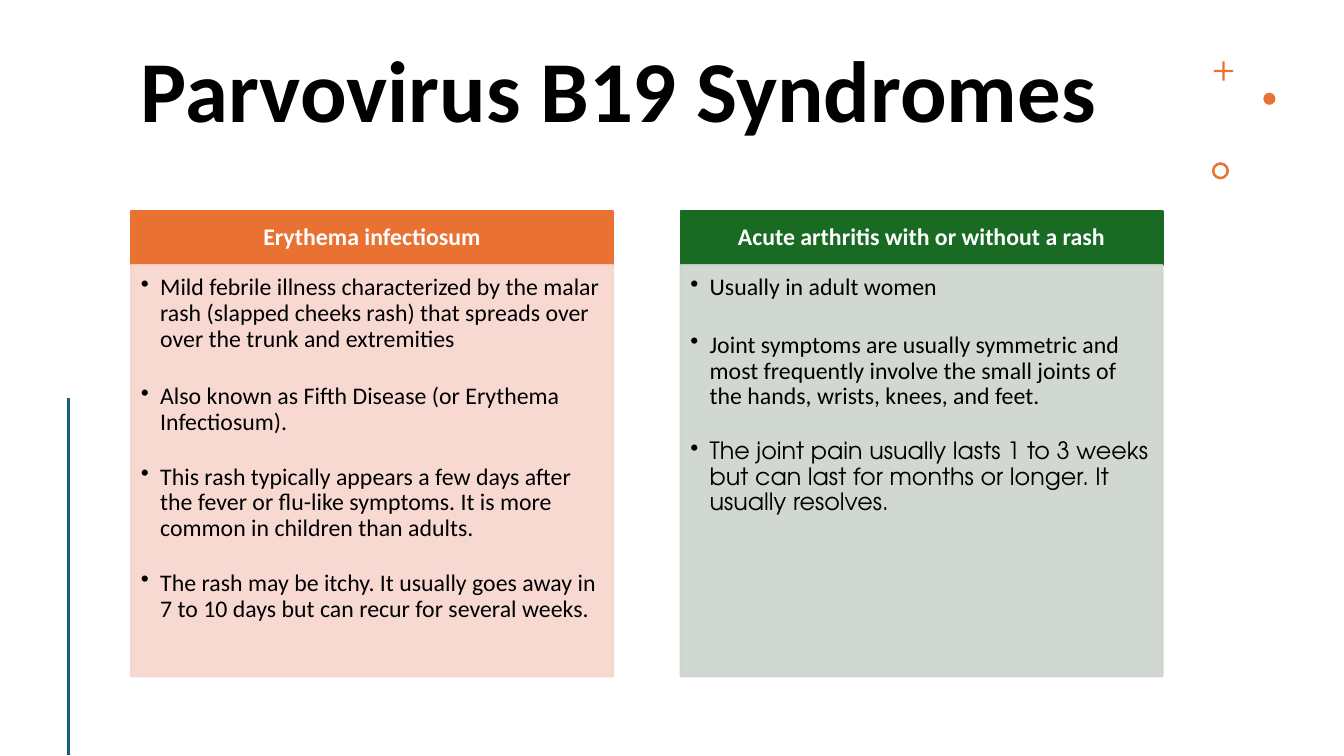
"""Builds the slide on the two Parvovirus B19 syndromes."""
import pptx
import pptx.dml.color
import pptx.enum.shapes
import pptx.enum.text
import pptx.oxml
import pptx.oxml.ns
import pptx.util

Inches = pptx.util.Inches
Pt = pptx.util.Pt
Shape = pptx.enum.shapes.MSO_SHAPE
Align = pptx.enum.text.PP_ALIGN
Anchor = pptx.enum.text.MSO_ANCHOR

TITLE = "Parvovirus B19 Syndromes"
BODY_FONT = "Calibri"
ACCENT = "E97132"
SYNDROMES = [
    {"name": "Erythema infectiosum", "dark": ACCENT, "pale": "F7D5CE", "points": [
        ("Mild febrile illness characterized by the malar rash (slapped cheeks rash) "
         "that spreads over over the trunk and extremities", BODY_FONT),
        ("Also known as Fifth Disease (or Erythema Infectiosum).", BODY_FONT),
        ("This rash typically appears a few days after the fever or flu-like symptoms. "
         "It is more common in children than adults.", BODY_FONT),
        ("The rash may be itchy. It usually goes away in 7 to 10 days but can recur "
         "for several weeks.", BODY_FONT)]},
    {"name": "Acute arthritis with or without a rash", "dark": "196B24", "pale": "CCD4CD", "points": [
        ("Usually in adult women", BODY_FONT),
        ("Joint symptoms are usually symmetric and most frequently involve the small "
         "joints of the hands, wrists, knees, and feet.", BODY_FONT),
        ("The joint pain usually lasts 1 to 3 weeks but can last for months or longer. "
         "It usually resolves.", "TeX Gyre Adventor")]},
]
ORNAMENTS = [
    (Shape.CROSS, 12.04, 0.61, 0.19, 0.44),
    (Shape.OVAL, 12.53, 0.92, 0.12, None),
    (Shape.DONUT, 12.02, 1.61, 0.17, 0.15),
]
LEFT, TOP, WIDTH, PITCH = 1.3, 2.09, 4.78, 5.45
HEAD_HEIGHT, BODY_HEIGHT = 0.54, 4.08
FIRST_GAP, LATER_GAP = 22.8, 20.7


def colour(value):
    return pptx.dml.color.RGBColor.from_string(value)


def add_element(parent, tag, **attributes):
    element = pptx.oxml.parse_xml(f"<a:{tag} {pptx.oxml.ns.nsdecls('a')}/>")
    for name, value in attributes.items():
        element.set(name, value)
    parent.append(element)


def add_filled(page, kind, left, top, width, height, fill):
    shape = page.shapes.add_shape(kind, Inches(left), Inches(top), Inches(width), Inches(height))
    shape.shadow.inherit = False
    shape.fill.solid()
    shape.fill.fore_color.rgb = colour(fill)
    shape.line.fill.background()
    return shape


def add_panel(page, left, top, height, fill, opacity=None):
    panel = add_filled(page, Shape.RECTANGLE, left, top, WIDTH, height, fill)
    panel.line.color.rgb = colour(fill)
    panel.line.width = Pt(1.5)
    if opacity:
        for paint in panel._element.spPr.iter(pptx.oxml.ns.qn("a:srgbClr")):
            add_element(paint, "alpha", val=str(opacity * 1000))
    return panel


def set_frame(shape, anchor, left, top, right, bottom):
    frame = shape.text_frame
    frame.word_wrap = True
    frame.vertical_anchor = anchor
    frame.margin_left, frame.margin_top = Inches(left), Inches(top)
    frame.margin_right, frame.margin_bottom = Inches(right), Inches(bottom)
    return frame


def write(para, text, size, font, ink, bold=False, align=Align.LEFT):
    para.alignment = align
    para.line_spacing = 0.9
    span = para.add_run()
    span.text = text
    span.font.size = Pt(size)
    span.font.name = font
    span.font.bold = bold
    span.font.color.rgb = colour(ink)


def add_bullet(para):
    properties = para._p.get_or_add_pPr()
    properties.set("marL", str(Inches(0.19)))
    properties.set("indent", str(-Inches(0.19)))
    add_element(properties, "buChar", char="•")


def add_syndrome(page, left, syndrome):
    head = add_panel(page, left, TOP, HEAD_HEIGHT, syndrome["dark"])
    frame = set_frame(head, Anchor.MIDDLE, 0.13, 0.08, 0.13, 0.08)
    write(frame.paragraphs[0], syndrome["name"], 17, BODY_FONT, "FFFFFF", True, Align.CENTER)

    body = add_panel(page, left, TOP + HEAD_HEIGHT, BODY_HEIGHT, syndrome["pale"], 90)
    frame = set_frame(body, Anchor.TOP, 0.1, 0.1, 0.13, 0.15)
    for index, (text, font) in enumerate(syndrome["points"]):
        para = frame.add_paragraph() if index else frame.paragraphs[0]
        write(para, text, 17, font, "000000")
        para.space_after = Pt(LATER_GAP if index else FIRST_GAP)
        add_bullet(para)


def main():
    deck = pptx.Presentation()
    deck.slide_width, deck.slide_height = Inches(13.33), Inches(7.5)
    page = deck.slides.add_slide(deck.slide_layouts[6])

    title = page.shapes.add_textbox(Inches(LEFT), Inches(0.42), Inches(10.23), Inches(1.31))
    frame = set_frame(title, Anchor.TOP, 0.1, 0.05, 0.1, 0.05)
    write(frame.paragraphs[0], TITLE, 62, BODY_FONT, "000000", True)

    for kind, left, top, size, thickness in ORNAMENTS:
        ornament = add_filled(page, kind, left, top, size, size, ACCENT)
        if thickness:
            ornament.adjustments[0] = thickness

    rule = page.shapes.add_connector(pptx.enum.shapes.MSO_CONNECTOR.STRAIGHT,
                                     Inches(0.68), Inches(3.95), Inches(0.68), Inches(7.49))
    rule.line.color.rgb = colour("156082")
    rule.line.width = Pt(2)
    add_element(rule._element.spPr, "effectLst")

    for index, syndrome in enumerate(SYNDROMES):
        add_syndrome(page, LEFT + index * PITCH, syndrome)

    deck.save("out.pptx")


if __name__ == "__main__":
    main()
